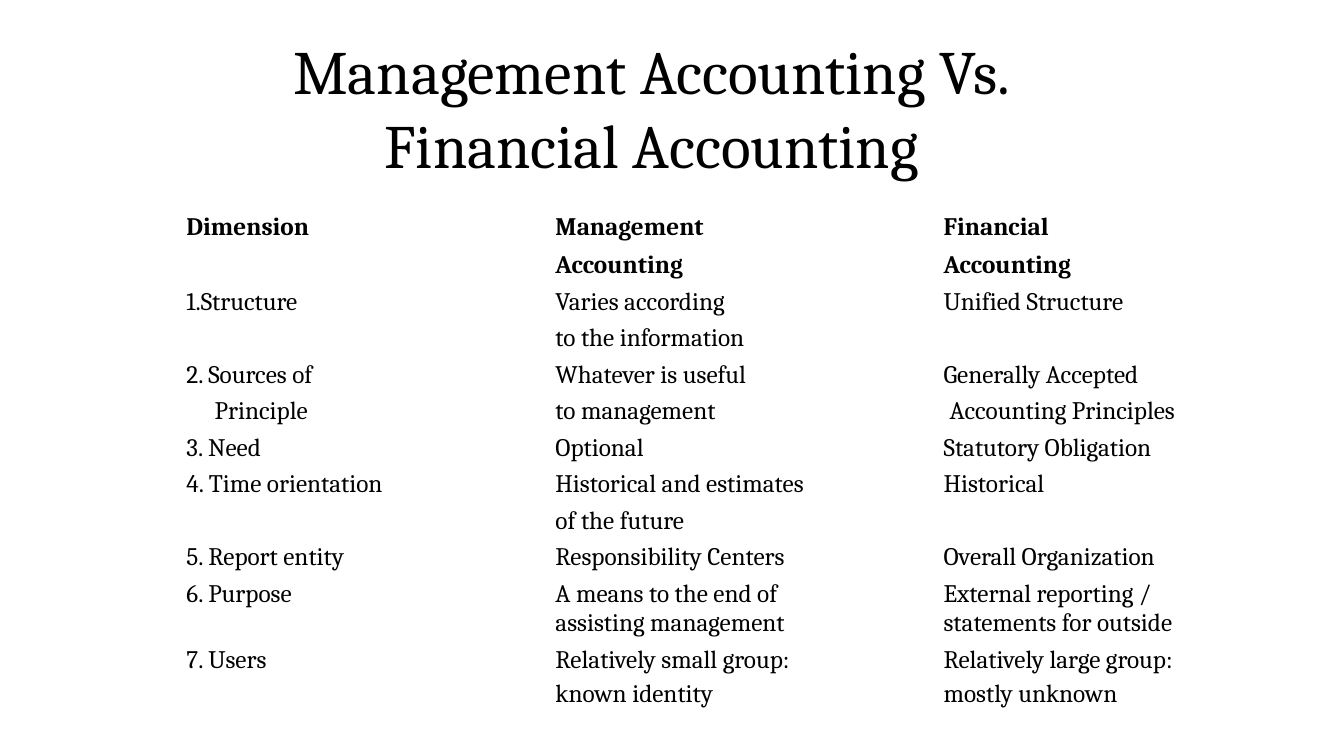
from dataclasses import dataclass

from pptx import Presentation
from pptx.dml.color import RGBColor
from pptx.enum.text import MSO_AUTO_SIZE, PP_ALIGN
from pptx.slide import Slide
from pptx.text.text import _Paragraph
from pptx.util import Inches, Pt

COLORS = {"text": "000000"}
FONT = "Cambria"
TITLE_LINES = ("Management Accounting Vs.", "Financial Accounting")


@dataclass(frozen=True)
class Column:
    width: float
    indent: float
    right_margin: float = 0


@dataclass(frozen=True)
class Row:
    dimension: str = ""
    management: str = ""
    financial: str = ""
    height: float | None = None
    bold: bool = False
    extra_indents: tuple[float, float, float] = (0, 0, 0)


COLUMNS = (Column(3.17, 0.04), Column(4.1, 0.53, 1), Column(3.33, 0.28, 0.5))
ROWS = (
    Row("Dimension", "Management", "Financial", height=0.38, bold=True),
    Row("", "Accounting", "Accounting", bold=True),
    Row("1.Structure", "Varies according", "Unified Structure"),
    Row("", "to the information"),
    Row("2. Sources of", "Whatever is useful", "Generally Accepted"),
    Row("Principle", "to management", "Accounting Principles",
        extra_indents=(0.28, 0, 0.06)),
    Row("3. Need", "Optional", "Statutory Obligation"),
    Row("4. Time orientation", "Historical and estimates", "Historical"),
    Row("", "of the future"),
    Row("5. Report entity", "Responsibility Centers", "Overall Organization"),
    Row("6. Purpose", "A means to the end of assisting management",
        "External reporting / statements for outside", height=0.66),
    Row("7. Users", "Relatively small group:", "Relatively large group:",
        height=0.33),
    Row("", "known identity", "mostly unknown", height=0.34),
)
TABLE_HEIGHT = 4.97
FIXED_HEIGHTS = [row.height for row in ROWS if row.height]
LINE_HEIGHT = (TABLE_HEIGHT - sum(FIXED_HEIGHTS)) / (len(ROWS) - len(FIXED_HEIGHTS))


def write_text(paragraph: _Paragraph, text: str, *, size: float,
               bold: bool = False, align: PP_ALIGN = PP_ALIGN.LEFT,
               line_spacing: float | None = None) -> None:
    paragraph.alignment = align
    if line_spacing:
        paragraph.line_spacing = Pt(line_spacing)
    run = paragraph.add_run()
    run.text = text
    run.font.name = FONT
    run.font.size = Pt(size)
    run.font.bold = bold
    run.font.color.rgb = RGBColor.from_string(COLORS["text"])


def draw_title(slide: Slide) -> None:
    shape = slide.shapes.add_textbox(Inches(1.92), Inches(0.33), Inches(9.09), Inches(1.44))
    frame = shape.text_frame
    frame.word_wrap = True
    frame.auto_size = MSO_AUTO_SIZE.SHAPE_TO_FIT_TEXT
    frame.margin_left = frame.margin_right = frame.margin_top = frame.margin_bottom = 0
    for index, line in enumerate(TITLE_LINES):
        paragraph = frame.add_paragraph() if index else frame.paragraphs[0]
        write_text(paragraph, line, size=44, align=PP_ALIGN.CENTER, line_spacing=52.8)


def draw_comparison(slide: Slide) -> None:
    width = sum(column.width for column in COLUMNS)
    table = slide.shapes.add_table(len(ROWS), len(COLUMNS), Inches(1.81), Inches(2.11),
                                   Inches(width), Inches(TABLE_HEIGHT)).table
    table.first_row = table.horz_banding = False
    for column_index, column in enumerate(COLUMNS):
        table.columns[column_index].width = Inches(column.width)
    for row_index, row in enumerate(ROWS):
        table.rows[row_index].height = Inches(row.height or LINE_HEIGHT)
        texts = (row.dimension, row.management, row.financial)
        for column_index, (column, text, extra) in enumerate(
                zip(COLUMNS, texts, row.extra_indents)):
            cell = table.cell(row_index, column_index)
            cell.fill.background()
            cell.margin_top = cell.margin_bottom = 0
            cell.margin_left = Inches(column.indent + extra)
            cell.margin_right = Inches(column.right_margin)
            if text:
                write_text(cell.text_frame.paragraphs[0], text, size=18, bold=row.bold)


def main() -> None:
    """Build the accounting comparison slide and save it."""
    presentation = Presentation()
    presentation.slide_width = Inches(13.33)
    presentation.slide_height = Inches(7.5)
    slide = presentation.slides.add_slide(presentation.slide_layouts[6])
    draw_title(slide)
    draw_comparison(slide)
    presentation.save("out.pptx")


if __name__ == "__main__":
    main()
